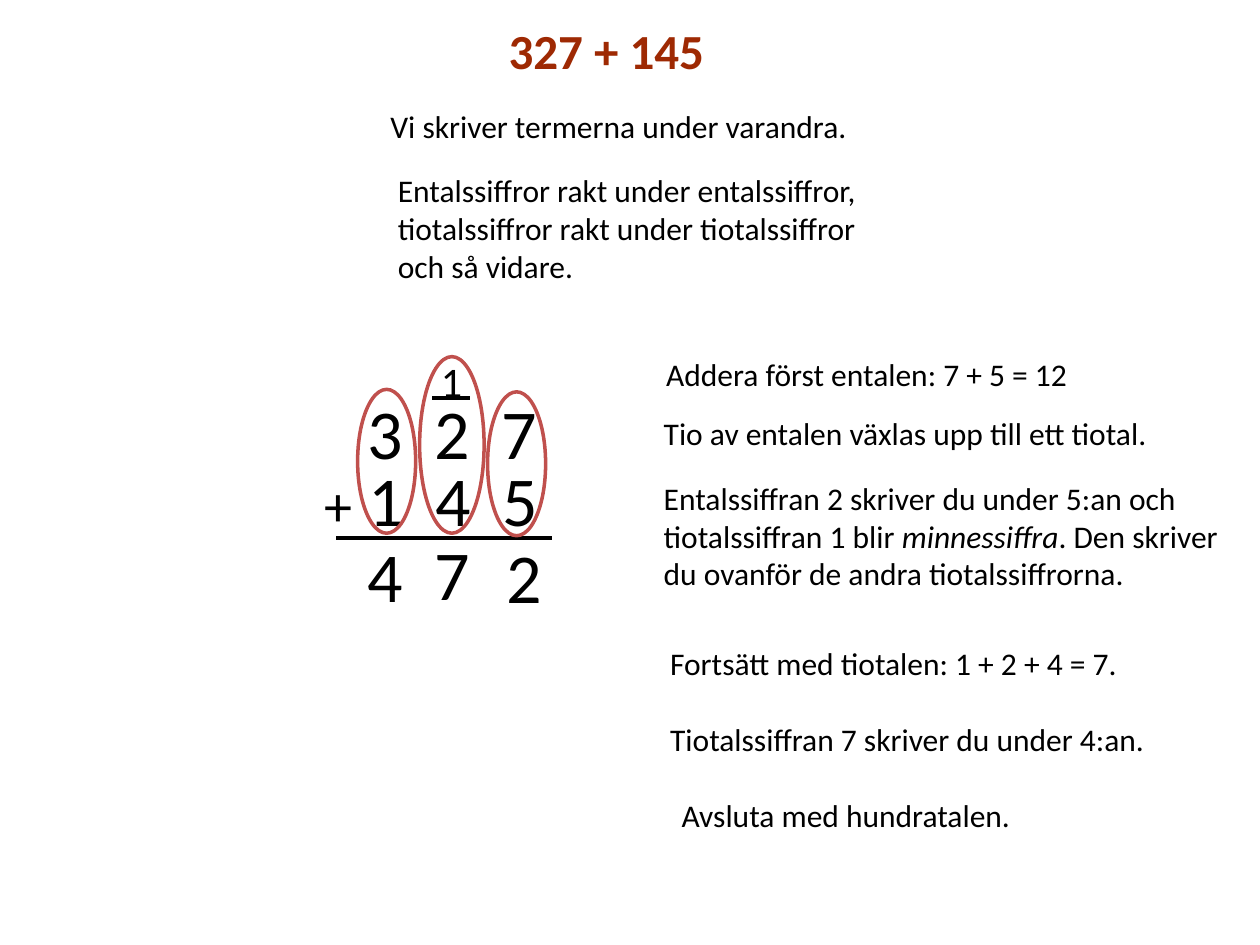
import pptx
import pptx.util
import pptx.dml.color
import pptx.enum.shapes
import pptx.enum.text
from lxml import etree
from pptx.oxml.ns import qn

Cm = pptx.util.Cm
Pt = pptx.util.Pt


def color(code):
    return pptx.dml.color.RGBColor.from_string(code)


class Board:
    """Holds the style and the current slide."""
    face = "Calibri"
    ink = "000000"
    head = "9E2903"
    ring = "C0504D"

    def __init__(self, deck):
        self.slide = deck.slides.add_slide(deck.slide_layouts[5])
        self.shapes = self.slide.shapes

    def style(self, para, size, tint):
        para.alignment = pptx.enum.text.PP_ALIGN.LEFT
        para.font.name = self.face
        para.font.size = Pt(size)
        para.font.color.rgb = color(tint)

    def title(self, text, x, y, w, h):
        box = self.shapes.title
        box.left, box.top, box.width, box.height = Cm(x), Cm(y), Cm(w), Cm(h)
        frame = box.text_frame
        frame.text = text
        frame.auto_size = pptx.enum.text.MSO_AUTO_SIZE.NONE
        frame.vertical_anchor = pptx.enum.text.MSO_ANCHOR.TOP
        para = frame.paragraphs[0]
        self.style(para, 28, self.head)
        para.font.bold = True

    def text(self, parts, x, y, w, h, size=18, tabs=()):
        """Add a text box and return its runs, one for each part."""
        box = self.shapes.add_textbox(Cm(x), Cm(y), Cm(w), Cm(h))
        box.text_frame.word_wrap = True
        para = box.text_frame.paragraphs[0]
        if tabs:
            stops = etree.SubElement(para._p.get_or_add_pPr(), qn("a:tabLst"))
            for pos in tabs:
                etree.SubElement(stops, qn("a:tab"), pos=str(Cm(pos)), algn="l")
        self.style(para, size, self.ink)
        runs = []
        for part in parts:
            run = para.add_run()
            run.text = part
            runs.append(run)
        return runs

    def line(self, x, y, end):
        rule = self.shapes.add_connector(
            pptx.enum.shapes.MSO_CONNECTOR.STRAIGHT, Cm(x), Cm(y), Cm(end), Cm(y))
        rule.line.color.rgb = color(self.ink)
        rule.line.width = Pt(2.25)
        etree.SubElement(rule._element.spPr, qn("a:effectLst"))

    def oval(self, x, y, w, h):
        ring = self.shapes.add_shape(
            pptx.enum.shapes.MSO_SHAPE.OVAL, Cm(x), Cm(y), Cm(w), Cm(h))
        ring.shadow.inherit = False
        ring.fill.background()
        ring.line.color.rgb = color(self.ring)
        ring.line.width = Pt(2)


def main():
    deck = pptx.Presentation()
    deck.slide_width, deck.slide_height = Cm(25.4), Cm(19.05)
    board = Board(deck)

    # Heading and introduction
    board.title("327 + 145", 10, 0.28, 5.7, 1.45)
    board.text(["Vi skriver termerna under varandra."], 7.62, 2.03, 10.16, 1.02)
    board.text(["Entalssiffror rakt under entalssiffror, tiotalssiffror "
                "rakt under tiotalssiffror och så vidare."],
               7.77, 3.33, 10.16, 2.57)

    # Terms, with the digits in even columns
    pitch, indent = 1.35, 0.88
    board.text(["3\t2\t7"], 7.16, 7.72, 5.7, 1.96, 40,
               [pitch, 2 * pitch])
    plus, digits = board.text(["+", "\t1\t4\t5"], 6.3, 9.07, 6.95, 1.96, 40,
                              [indent + n * pitch for n in range(3)])
    plus.font.size = Pt(32)
    board.line(6.78, 10.85, 11.13)

    # Carried digit
    board.line(8.71, 8.03, 9.47)
    board.text(["1"], 8.64, 7.04, 1.17, 1.27, 24)

    # Sum
    for digit, x, y in [("4", 7.16, 10.62), ("7", 8.51, 10.57), ("2", 9.96, 10.64)]:
        board.text([digit], x, y, 1.17, 1.96, 40)

    # Rings round the columns
    for x, y, w, h in [(7.21, 7.85, 1.17, 2.9), (8.46, 7.19, 1.3, 3.56),
                       (9.83, 7.9, 1.17, 2.9)]:
        board.oval(x, y, w, h)

    # Steps
    for step, x, y in [
        ("Addera först entalen: 7 + 5 = 12", 13.18, 7.04),
        ("Tio av entalen växlas upp till ett tiotal.", 13.13, 8.23),
        ("Fortsätt med tiotalen: 1 + 2 + 4 = 7.", 13.26, 12.85),
        ("Tiotalssiffran 7 skriver du under 4:an.", 13.26, 14.4),
        ("Avsluta med hundratalen.", 13.49, 15.93),
    ]:
        board.text([step], x, y, 11.38, 1.02)
    runs = board.text(
        ["Entalssiffran 2 skriver du under 5:an och tiotalssiffran 1 blir ",
         "minnessiffra",
         ". Den skriver du ovanför de andra tiotalssiffrorna."],
        13.13, 9.53, 12.14, 2.57)
    runs[1].font.italic = True

    deck.save("out.pptx")


if __name__ == "__main__":
    main()
